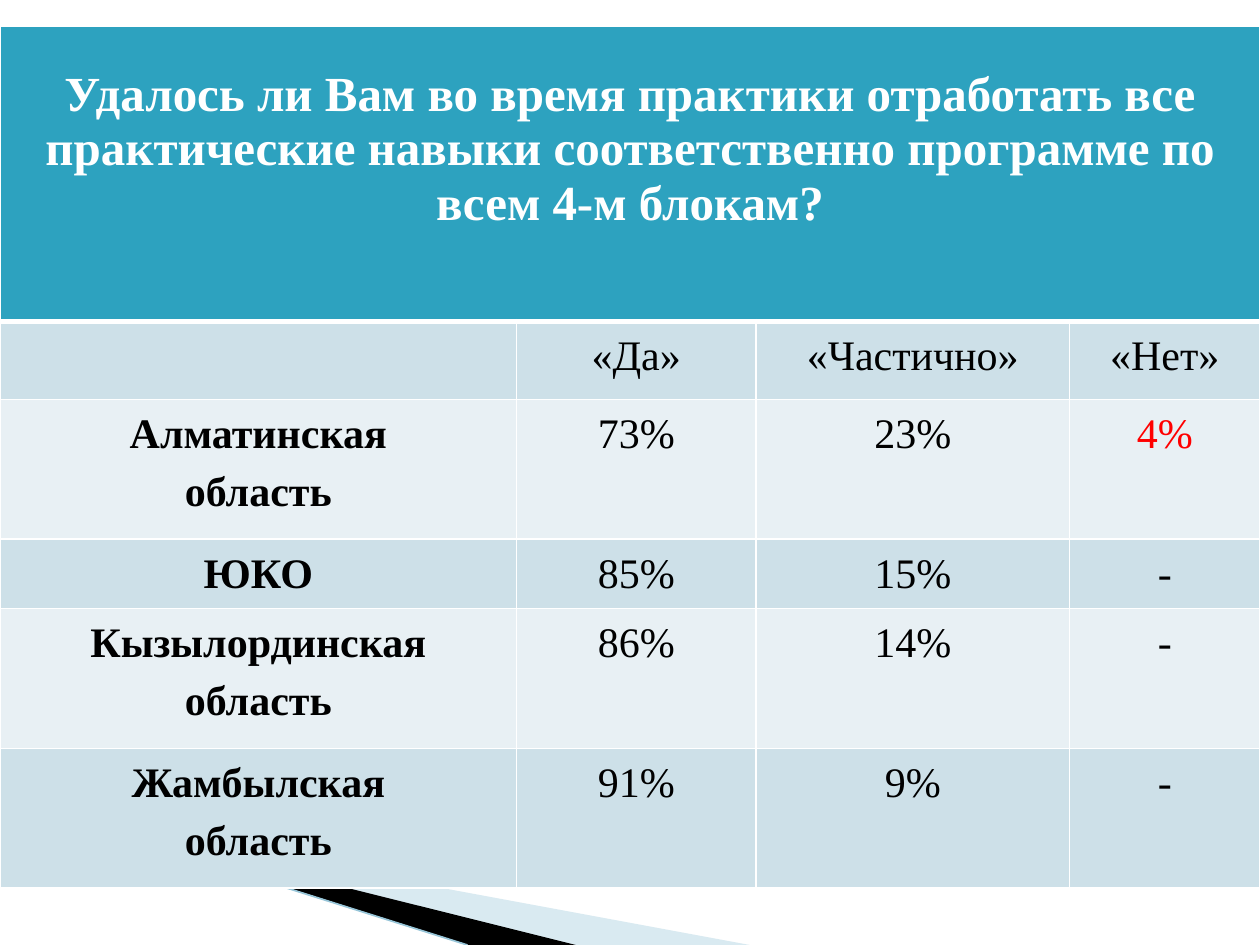
"""Build the practice-skills survey slide with its results table."""
from dataclasses import dataclass

from lxml import etree
from pptx import Presentation
from pptx import util as u
from pptx.dml.color import RGBColor
from pptx.enum import shapes, text
from pptx.oxml import ns


@dataclass(frozen=True)
class Theme:
    font: str = "Times New Roman"
    title_size: int = 28
    body_size: int = 24
    header: str = "2DA2BF"
    bands: tuple = ("CDE0E8", "E8F0F4")
    white: str = "FFFFFF"
    ink: str = "000000"
    alert: str = "FF0000"
    wedge: str = "A0CBDC"
    line: str = "97C5D8"


def add_border(cell, side, width, color):
    """Append one cell edge, in points."""
    tc_pr = cell._tc.get_or_add_tcPr()
    ln = etree.SubElement(tc_pr, ns.qn(f"a:ln{side}"), w=str(u.Pt(width)))
    fill = etree.SubElement(ln, ns.qn("a:solidFill"))
    etree.SubElement(fill, ns.qn("a:srgbClr"), val=color)


def write_cell(cell, value, size, color, bold=False, italic=False, spacing=None):
    """Write centred paragraphs, one per line of value."""
    tf = cell.text_frame
    tf.text = value
    for p in tf.paragraphs:
        p.alignment = text.PP_ALIGN.CENTER
        p.line_spacing = spacing
        for r in p.runs:
            r.font.name = theme.font
            r.font.size = u.Pt(size)
            r.font.bold = bold
            r.font.italic = italic
            r.font.color.rgb = RGBColor.from_string(color)


theme = Theme()
prs = Presentation()
prs.slide_width, prs.slide_height = u.Inches(10), u.Inches(7.5)
s = prs.slides.add_slide(prs.slide_layouts[6])

wedges = [
    ([(0.55, 6.5), (5.95, 7.5), (4.56, 7.5)], theme.wedge, 40),
    ([(0.53, 6.49), (4.57, 7.5), (3.72, 7.5)], theme.ink, 100),
]
for points, color, opacity in wedges:
    start, *rest = [(u.Inches(x), u.Inches(y)) for x, y in points]
    builder = s.shapes.build_freeform(*start)
    builder.add_line_segments(rest, close=True)
    sp = builder.convert_to_shape()
    sp.shadow.inherit = False
    sp.line.fill.background()
    sp.fill.solid()
    sp.fill.fore_color.rgb = RGBColor.from_string(color)
    if opacity < 100:
        clr = sp._element.spPr.find(f".//{ns.qn('a:srgbClr')}")
        etree.SubElement(clr, ns.qn("a:alpha"), val=str(opacity * 1000))

edge = s.shapes.add_connector(
    shapes.MSO_CONNECTOR.STRAIGHT,
    u.Inches(0), u.Inches(6.33), u.Inches(3.71), u.Inches(7.5))
edge.line.color.rgb = RGBColor.from_string(theme.line)
edge.line.width = u.Pt(0.95)
etree.SubElement(edge._element.spPr, ns.qn("a:effectLst"))

question = ("Удалось ли Вам во время практики отработать все практические "
            "навыки соответственно программе по всем 4-м блокам?")
rows = [
    (question, "", "", ""),
    ("", "«Да»", "«Частично»", "«Нет»"),
    ("Алматинская\nобласть", "73%", "23%", "4%"),
    ("ЮКО", "85%", "15%", "-"),
    ("Кызылординская\nобласть", "86%", "14%", "-"),
    ("Жамбылская\nобласть", "91%", "9%", "-"),
]
widths = [4.1, 1.9, 2.49, 1.51]
heights = [2.34, 0.62, 1.11, 0.55, 1.11, 1.11]

table = s.shapes.add_table(
    len(rows), len(widths), u.Inches(0), u.Inches(0.21),
    u.Inches(sum(widths)), u.Inches(sum(heights))).table
for column, width in zip(table.columns, widths):
    column.width = u.Inches(width)
for row, height in zip(table.rows, heights):
    row.height = u.Inches(height)
table.cell(0, 0).merge(table.cell(0, len(widths) - 1))

for i, values in enumerate(rows):
    for j, value in enumerate(values):
        cell = table.cell(i, j)
        for side in "LRTB":
            thick = (i, side) in [(0, "B"), (1, "T")]
            add_border(cell, side, 3 if thick else 1, theme.white)
        cell.fill.solid()
        color = theme.bands[(i - 1) % 2] if i else theme.header
        cell.fill.fore_color.rgb = RGBColor.from_string(color)
        if i == 0:
            cell.margin_top = u.Inches(0.33)
            write_cell(cell, value, theme.title_size, theme.white, bold=True)
        else:
            cell.margin_left = cell.margin_right = u.Inches(0.07)
            cell.margin_top = cell.margin_bottom = 0
            write_cell(cell, value, theme.body_size,
                       theme.alert if value == "4%" else theme.ink,
                       bold=j == 0, italic=value == "-", spacing=1.25)

prs.save("out.pptx")
